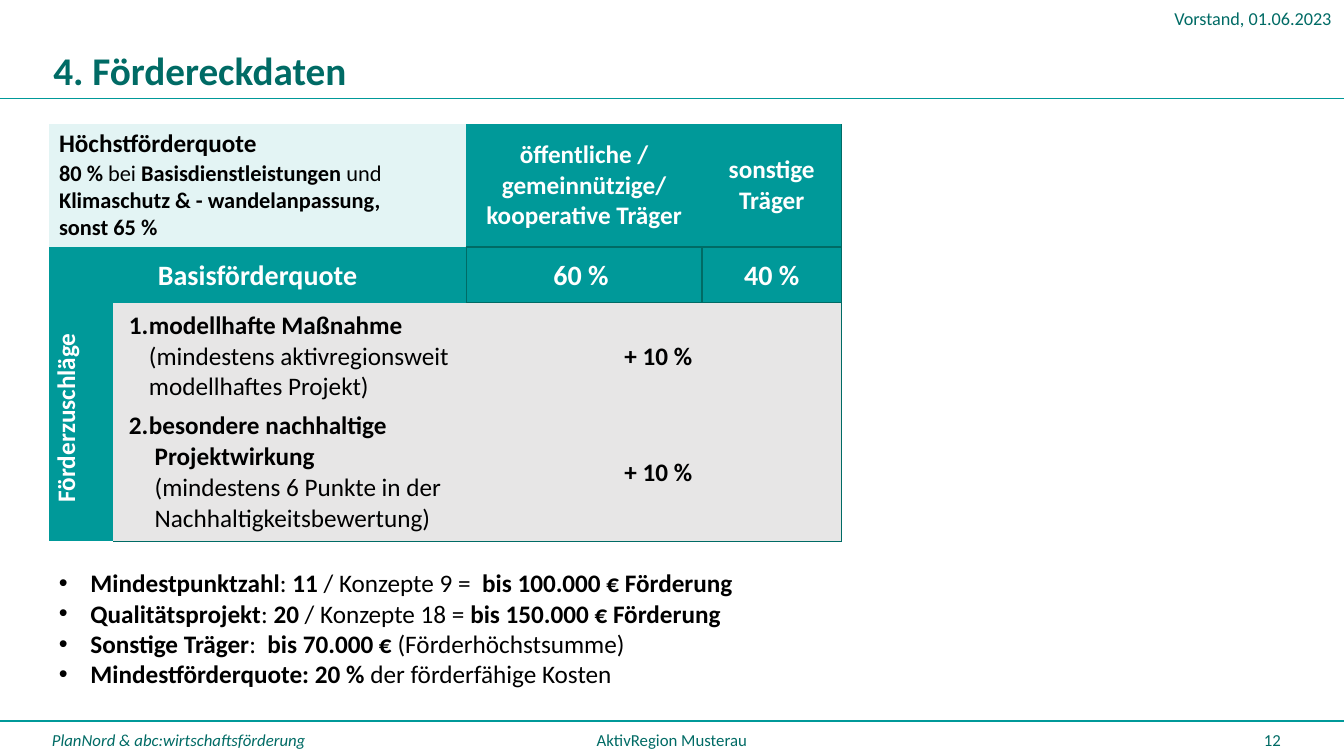
import pptx
import pptx.util
import pptx.dml.color
import pptx.enum.shapes
import pptx.enum.text
import pptx.oxml.ns
from lxml import etree

Pt = pptx.util.Pt
RGBColor = pptx.dml.color.RGBColor
ALIGN = pptx.enum.text.PP_ALIGN
ANCHOR = pptx.enum.text.MSO_ANCHOR
qn = pptx.oxml.ns.qn

TEAL = RGBColor(0x00, 0x99, 0x99)
DARK_TEAL = RGBColor(0x00, 0x6B, 0x65)
PALE_TEAL = RGBColor(0xE3, 0xF4, 0xF4)
GREY = RGBColor(0xE7, 0xE6, 0xE6)
WHITE = RGBColor(0xFF, 0xFF, 0xFF)
BLACK = RGBColor(0x00, 0x00, 0x00)

FONT = "Calibri"
NO_GRID_STYLE = "{2D5ABB26-0587-4C30-8999-92F81FD0307C}"
SLIDE_WIDTH, SLIDE_HEIGHT = 960, 540


def fill_paragraph(paragraph, runs, size, color, align=ALIGN.LEFT, bold=None,
                   italic=None, bullet=None, indent=0, line_spacing=None):
    """Write runs of (text, bold[, size]); a newline becomes a line break."""
    properties = paragraph._p.get_or_add_pPr()
    if bullet:
        properties.set("marL", str(Pt(indent)))
        properties.set("indent", str(-Pt(indent)))
        if bullet == "number":
            etree.SubElement(properties, qn("a:buAutoNum"), type="arabicPeriod")
        else:
            etree.SubElement(properties, qn("a:buFont"), typeface="Arial")
            etree.SubElement(properties, qn("a:buChar"), char=bullet)
    paragraph.alignment = align
    if line_spacing:
        paragraph.line_spacing = line_spacing
    font = paragraph.font
    font.name, font.size, font.bold, font.italic = FONT, Pt(size), bold, italic
    font.color.rgb = color
    if isinstance(runs, str):
        runs = [(runs, bold)]
    for text, run_bold, *run_size in runs:
        for number, line in enumerate(text.split("\n")):
            if number:
                paragraph.add_line_break()
            if line:
                run = paragraph.add_run()
                run.text = line
                if run_bold != bold:
                    run.font.bold = run_bold
                if run_size:
                    run.font.size = Pt(run_size[0])


def add_text(slide, box, paragraphs, size, color, anchor=ANCHOR.TOP, **style):
    frame = slide.shapes.add_textbox(*map(Pt, box)).text_frame
    frame.word_wrap = True
    frame.vertical_anchor = anchor
    for number, runs in enumerate(paragraphs):
        paragraph = frame.add_paragraph() if number else frame.paragraphs[0]
        fill_paragraph(paragraph, runs, size, color, **style)


def add_rule(slide, top):
    line = slide.shapes.add_connector(pptx.enum.shapes.MSO_CONNECTOR.STRAIGHT,
                                      0, Pt(top), Pt(SLIDE_WIDTH), Pt(top))
    line.line.color.rgb = TEAL
    line.line.width = Pt(0.75)
    etree.SubElement(line._element.spPr, qn("a:effectLst"))


def add_plain_table(slide, left, top, widths, heights):
    frame = slide.shapes.add_table(len(heights), len(widths), Pt(left), Pt(top),
                                   Pt(sum(widths)), Pt(sum(heights)))
    table = frame.table
    table.first_row = table.horz_banding = False
    table._tbl.tblPr.find(qn("a:tableStyleId")).text = NO_GRID_STYLE
    for column, width in zip(table.columns, widths):
        column.width = Pt(width)
    for row, height in zip(table.rows, heights):
        row.height = Pt(height)
    return table


def style_cell(cell, color, borders="", anchor=ANCHOR.MIDDLE, margins=(11, 5, 11, 5)):
    """Set fill, margins (left, top, right, bottom) and borders from L, R, T, B."""
    cell.fill.solid()
    cell.fill.fore_color.rgb = color
    cell.vertical_anchor = anchor
    (cell.margin_left, cell.margin_top,
     cell.margin_right, cell.margin_bottom) = map(Pt, margins)
    properties = cell._tc.tcPr
    for position, side in enumerate(borders):
        line = etree.Element(qn("a:ln" + side), w=str(Pt(1)))
        solid = etree.SubElement(line, qn("a:solidFill"))
        etree.SubElement(solid, qn("a:srgbClr"), val=str(DARK_TEAL))
        properties.insert(position, line)


def add_rate_table(slide, left, top):
    table = add_plain_table(slide, left, top, (298, 168.5, 99.5), (88, 40))

    # Maximum rate
    cell = table.cell(0, 0)
    style_cell(cell, PALE_TEAL, anchor=ANCHOR.TOP, margins=(7.2, 3.6, 7.2, 3.6))
    fill_paragraph(cell.text_frame.paragraphs[0], [
        ("Höchstförderquote\n", True, 18), ("80 % ", True), ("bei", False),
        (" Basisdienstleistungen ", True), ("und", False),
        (" Klimaschutz & - wandelanpassung, \nsonst 65 %", True),
    ], 16, BLACK, bold=True)

    # Kinds of applicant and their basic rates
    cells = [
        (0, 1, "öffentliche / gemeinnützige/\nkooperative Träger", 18, "B"),
        (0, 2, "sonstige Träger", 18, "RB"),
        (1, 0, "Basisförderquote", 20, "R"),
        (1, 1, "60 % ", 20, "LTB"),
        (1, 2, "40 %", 20, "RTB"),
    ]
    for row, column, text, size, borders in cells:
        cell = table.cell(row, column)
        margins = (11, 5, 11, 5) if column else (0, 0, 0, 0)
        style_cell(cell, TEAL, borders, margins=margins)
        fill_paragraph(cell.text_frame.paragraphs[0], text, size, WHITE, ALIGN.CENTER,
                       bold=True, line_spacing=1.07 if row else None)


def add_bonus_table(slide, left, top):
    table = add_plain_table(slide, left, top, (46, 251.5, 268.5), (170,))
    heading, measures, bonuses = (table.cell(0, column) for column in range(3))

    # Turned heading
    style_cell(heading, TEAL, margins=(0, 0, 0, 0))
    heading._tc.tcPr.set("vert", "vert270")
    paragraph = heading.text_frame.paragraphs[0]
    fill_paragraph(paragraph, "Förderzuschläge", 18, WHITE, ALIGN.CENTER,
                   bold=True, line_spacing=1.07)
    paragraph._p.pPr.set("marL", str(Pt(6)))

    # Numbered measures
    style_cell(measures, GREY, "B")
    items = [
        [("modellhafte Maßnahme \n", True),
         ("(mindestens aktivregionsweit modellhaftes Projekt)", False)],
        [("besondere nachhaltige\n Projektwirkung\n ", True),
         ("(mindestens 6 Punkte in der \n Nachhaltigkeitsbewertung)", False)],
    ]
    frame = measures.text_frame
    for number, runs in enumerate(items):
        paragraph = frame.add_paragraph() if number else frame.paragraphs[0]
        fill_paragraph(paragraph, runs, 18, BLACK, bold=True, bullet="number", indent=14.4)
        paragraph.space_after = Pt(6)

    # Bonus beside each measure
    style_cell(bonuses, GREY, "RB", ANCHOR.TOP, (18, 27.5, 11, 5))
    frame = bonuses.text_frame
    for number in range(len(items)):
        paragraph = frame.add_paragraph() if number else frame.paragraphs[0]
        fill_paragraph(paragraph, "+ 10 %", 18, BLACK, ALIGN.CENTER, bold=True)
        if number:
            paragraph.space_before = Pt(61)


def add_conditions(slide, box):
    add_text(slide, box, [
        [("Mindestpunktzahl", True), (": ", False), ("11", True),
         (" / Konzepte 9 =  ", False), ("bis 100.000 € Förderung", True)],
        [("Qualitätsprojekt", True), (": ", False), ("20 ", True),
         ("/ Konzepte 18 = ", False), ("bis 150.000 € Förderung", True)],
        [("Sonstige Träger", True), (":  ", False), ("bis 70.000 € ", True),
         ("(Förderhöchstsumme)", False)],
        [("Mindestförderquote: 20 % ", True), ("der förderfähige Kosten", False)],
    ], 18, BLACK, bold=True, bullet="•", indent=22.5)


def add_header(slide):
    add_text(slide, (760, 2, 198, 23), ["Vorstand, 01.06.2023"], 13, DARK_TEAL,
             align=ALIGN.RIGHT)
    add_text(slide, (31, 34.5, 759, 35.5), ["4. Fördereckdaten"], 28, DARK_TEAL,
             ANCHOR.MIDDLE, bold=True, line_spacing=0.9)
    add_rule(slide, 70.5)


def add_footer(slide, top):
    add_rule(slide, top + 1)
    parts = [
        (30, 260, "PlanNord & abc:wirtschaftsförderung", ALIGN.LEFT, True),
        (318, 324, "AktivRegion Musterau", ALIGN.CENTER, None),
        (706, 216, "12", ALIGN.RIGHT, None),
    ]
    for left, width, text, align, italic in parts:
        add_text(slide, (left, top, width, 29), [text], 12, DARK_TEAL, ANCHOR.MIDDLE,
                 align=align, italic=italic)


def main():
    presentation = pptx.Presentation()
    presentation.slide_width = Pt(SLIDE_WIDTH)
    presentation.slide_height = Pt(SLIDE_HEIGHT)
    slide = presentation.slides.add_slide(presentation.slide_layouts[6])
    add_header(slide)
    add_rate_table(slide, 35, 88.5)
    add_bonus_table(slide, 35, 216.5)
    add_conditions(slide, (35, 402, 546, 94))
    add_footer(slide, 514)
    presentation.save("out.pptx")


if __name__ == "__main__":
    main()
